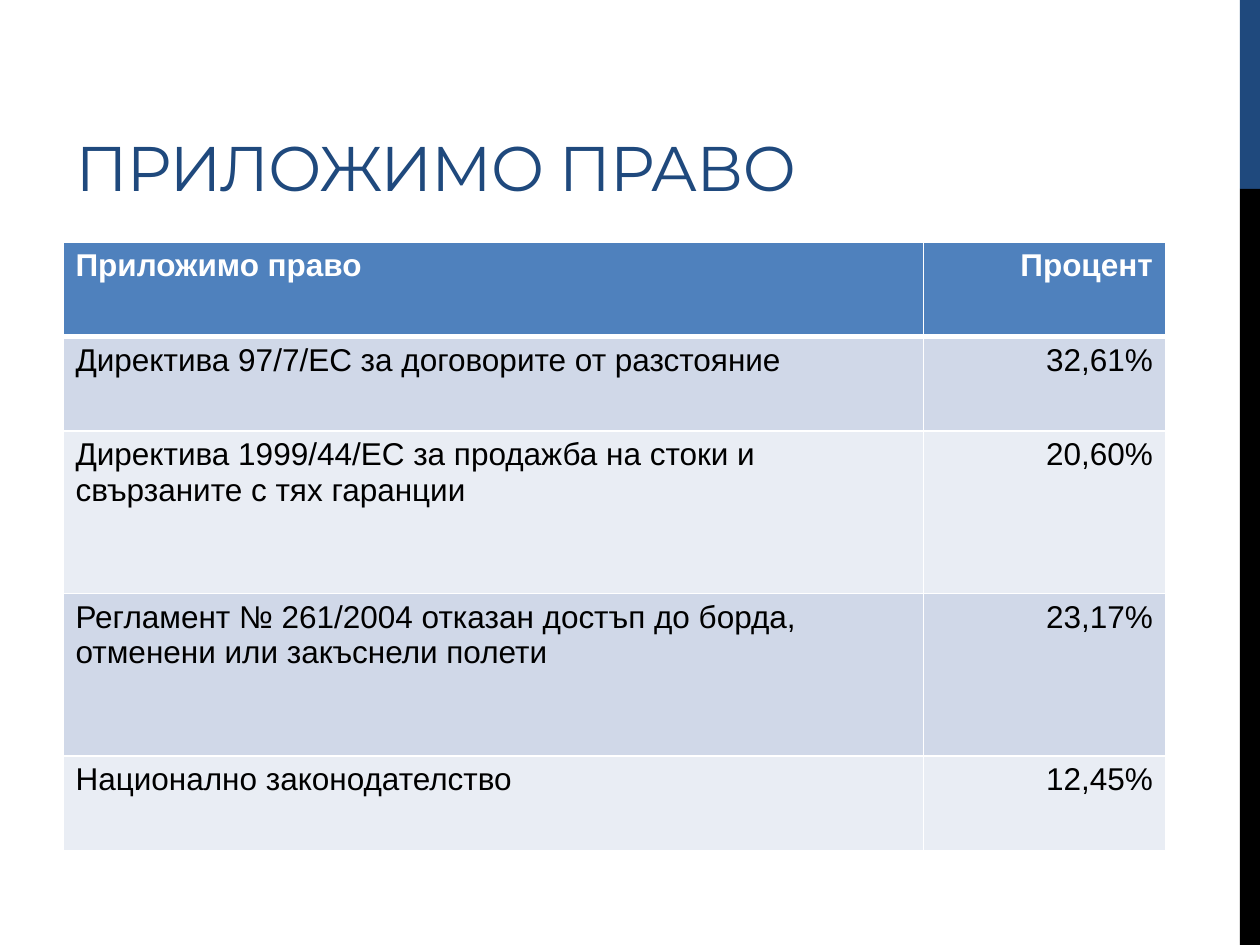
from lxml import etree
from pptx import Presentation
from pptx import util as u
from pptx.dml import color
from pptx.enum import shapes, text
from pptx.oxml import ns

NAVY, BLACK, WHITE = "1F497D", "000000", "FFFFFF"
HEADER_FILL, BAND_FILLS = "4F81BD", ("D0D8E8", "E9EDF4")


def rgb(value):
    return color.RGBColor.from_string(value)


class SlideBuilder:
    title_format = {"name": "Montserrat", "size": u.Pt(36), "bold": False}
    cell_format = {"name": "Arial", "size": u.Pt(18)}

    def __init__(self, deck):
        self.page = deck.slides.add_slide(deck.slide_layouts[5])

    def style(self, span, values, shade):
        for name, value in values.items():
            setattr(span.font, name, value)
        span.font.color.rgb = rgb(shade)

    def bar(self, left, top, width, height, shade):
        box = self.page.shapes.add_shape(
            shapes.MSO_SHAPE.RECTANGLE, *map(u.Inches, (left, top, width, height)))
        box.shadow.inherit = False
        box.fill.solid()
        box.fill.fore_color.rgb = rgb(shade)
        box.line.fill.background()

    def title(self, words, left, top, width, height):
        box = self.page.shapes.title
        place = {"left": left, "top": top, "width": width, "height": height}
        for name, value in place.items():
            setattr(box, name, u.Inches(value))
        frame = box.text_frame
        frame.word_wrap = True
        frame.auto_size = text.MSO_AUTO_SIZE.NONE
        frame.vertical_anchor = text.MSO_ANCHOR.BOTTOM
        para = frame.paragraphs[0]
        para.alignment = text.PP_ALIGN.LEFT
        span = para.add_run()
        span.text = words
        self.style(span, self.title_format, NAVY)
        span.font._element.set("spc", "-60")

    def borders(self, cell, widths):
        properties = cell._tc.get_or_add_tcPr()
        for side, width in widths.items():
            line = etree.SubElement(properties, ns.qn(f"a:ln{side}"), w=str(u.Pt(width)))
            fill = etree.SubElement(line, ns.qn("a:solidFill"))
            etree.SubElement(fill, ns.qn("a:srgbClr"), val=WHITE)

    def cell(self, cell, words, row, column):
        is_header = row == 0
        # The rule below the header is thicker than the others
        self.borders(cell, {"L": 1, "R": 1, "T": 3 if row == 1 else 1,
                            "B": 3 if is_header else 1})
        cell.fill.solid()
        cell.fill.fore_color.rgb = rgb(HEADER_FILL if is_header else BAND_FILLS[(row - 1) % 2])
        para = cell.text_frame.paragraphs[0]
        para.alignment = text.PP_ALIGN.RIGHT if column else text.PP_ALIGN.LEFT
        span = para.add_run()
        span.text = words
        self.style(span, {**self.cell_format, "bold": is_header},
                   WHITE if is_header else BLACK)

    def table(self, rows, left, top, widths, heights):
        frame = self.page.shapes.add_table(
            len(rows), len(widths), u.Inches(left), u.Inches(top),
            u.Inches(sum(widths)), u.Inches(sum(heights)))
        grid = frame.table
        for column, width in zip(grid.columns, widths):
            column.width = u.Inches(width)
        for line, height in zip(grid.rows, heights):
            line.height = u.Inches(height)
        for row, entries in enumerate(rows):
            for column, words in enumerate(entries):
                self.cell(grid.cell(row, column), words, row, column)


def main():
    deck = Presentation()
    deck.slide_width, deck.slide_height = u.Inches(10), u.Inches(7.5)
    builder = SlideBuilder(deck)

    # Side band
    builder.bar(9.84, 0, 0.16, 1.5, NAVY)
    builder.bar(9.84, 1.5, 0.16, 6, BLACK)

    # Title
    builder.title("ПРИЛОЖИМО ПРАВО", 0.5, 0.17, 6.33, 1.5)

    # Share of each applicable law
    rows = [
        ("Приложимо право", "Процент"),
        ("Директива 97/7/ЕС за договорите от разстояние", "32,61%"),
        ("Директива 1999/44/ЕС за продажба на стоки и свързаните с тях гаранции", "20,60%"),
        ("Регламент № 261/2004 отказан достъп до борда, отменени или закъснели полети",
         "23,17%"),
        ("Национално законодателство", "12,45%"),
    ]
    builder.table(rows, 0.5, 1.92, (6.83, 1.92), (0.75, 0.75, 1.29, 1.29, 0.75))

    deck.save("out.pptx")


if __name__ == "__main__":
    main()
